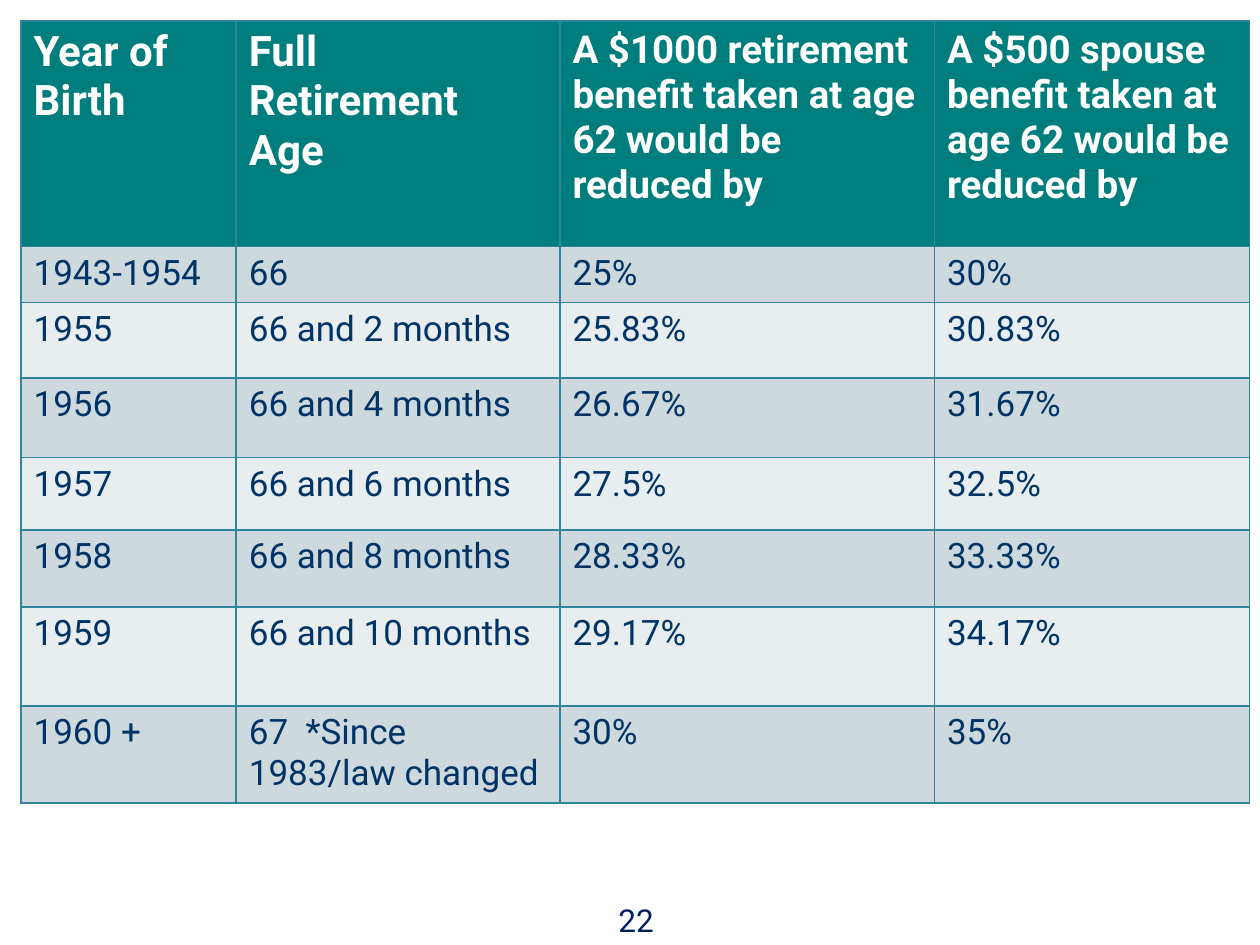
"""Build a slide with a table of retirement ages and benefit reductions."""
from dataclasses import dataclass

from lxml import etree
from pptx import Presentation
from pptx import util as u
from pptx.dml.color import RGBColor
from pptx.enum import text
from pptx.oxml.ns import qn

HUES = {
    "head": "007D7D", "dark": "CED9DE", "light": "E8EDEF", "rule": "31859B",
    "white": "FFFFFF", "body": "003366", "page": "002060",
}
FACE = "Roboto"
WIDTHS = (123, 185, 214, 180)
HEAD_TALL = 129


@dataclass
class Row:
    tall: float
    birth: str
    age: str
    own: str
    spouse: str

    def cells(self) -> tuple[str, ...]:
        return self.birth, self.age, self.own, self.spouse


@dataclass
class Style:
    size: float
    hue: str
    bold: bool = False


HEADS = (
    ("Year of Birth", 24),
    ("Full\nRetirement\nAge", 24),
    ("A $1000 retirement benefit taken at age 62 would be reduced by", 22),
    ("A $500 spouse benefit taken at age 62 would be reduced by", 22),
)
ROWS = (
    Row(32, "1943-1954", "66", "25%", "30%"),
    Row(43, "1955", "66 and 2 months", "25.83%", "30.83%"),
    Row(45.5, "1956", "66 and 4 months", "26.67%", "31.67%"),
    Row(41.5, "1957", "66 and 6 months", "27.5%", "32.5%"),
    Row(44, "1958", "66 and 8 months", "28.33%", "33.33%"),
    Row(56.5, "1959", "66 and 10 months", "29.17%", "34.17%"),
    Row(55.5, "1960 +", "67  *Since 1983/law changed", "30%", "35%"),
)


def write(frame, words: str, style: Style) -> None:
    frame.text = words
    for para in frame.paragraphs:
        for run in para.runs:
            font = run.font
            font.name = FACE
            font.size = u.Pt(style.size)
            font.bold = style.bold
            font.color.rgb = RGBColor.from_string(HUES[style.hue])


def edge(cell) -> None:
    props = cell._tc.get_or_add_tcPr()
    for side in ("lnL", "lnR", "lnT", "lnB"):
        line = etree.SubElement(props, qn(f"a:{side}"), w=str(u.Pt(1)))
        fill = etree.SubElement(line, qn("a:solidFill"))
        etree.SubElement(fill, qn("a:srgbClr"), val=HUES["rule"])


def draw_cell(cell, words: str, style: Style, fill: str) -> None:
    edge(cell)
    cell.fill.solid()
    cell.fill.fore_color.rgb = RGBColor.from_string(HUES[fill])
    write(cell.text_frame, words, style)


def draw_table(slide) -> None:
    talls = [HEAD_TALL] + [row.tall for row in ROWS]
    table = slide.shapes.add_table(
        len(talls), len(WIDTHS), u.Pt(12), u.Pt(12),
        u.Pt(sum(WIDTHS)), u.Pt(sum(talls))).table
    for col, wide in zip(table.columns, WIDTHS):
        col.width = u.Pt(wide)
    for line, tall in zip(table.rows, talls):
        line.height = u.Pt(tall)
    for c, (words, size) in enumerate(HEADS):
        draw_cell(table.cell(0, c), words, Style(size, "white", True), "head")
    for r, row in enumerate(ROWS, 1):
        fill = "dark" if r % 2 else "light"
        for c, words in enumerate(row.cells()):
            draw_cell(table.cell(r, c), words, Style(20, "body"), fill)


def draw_page(slide) -> None:
    box = slide.shapes.add_textbox(u.Pt(279.5), u.Pt(511), u.Pt(168), u.Pt(29))
    frame = box.text_frame
    frame.word_wrap = True
    frame.vertical_anchor = text.MSO_ANCHOR.MIDDLE
    write(frame, "22", Style(18, "page"))
    frame.paragraphs[0].alignment = text.PP_ALIGN.CENTER


def main() -> None:
    deck = Presentation()
    deck.slide_width, deck.slide_height = u.Pt(720), u.Pt(540)
    slide = deck.slides.add_slide(deck.slide_layouts[6])
    draw_table(slide)
    draw_page(slide)
    deck.save("out.pptx")


if __name__ == "__main__":
    main()
